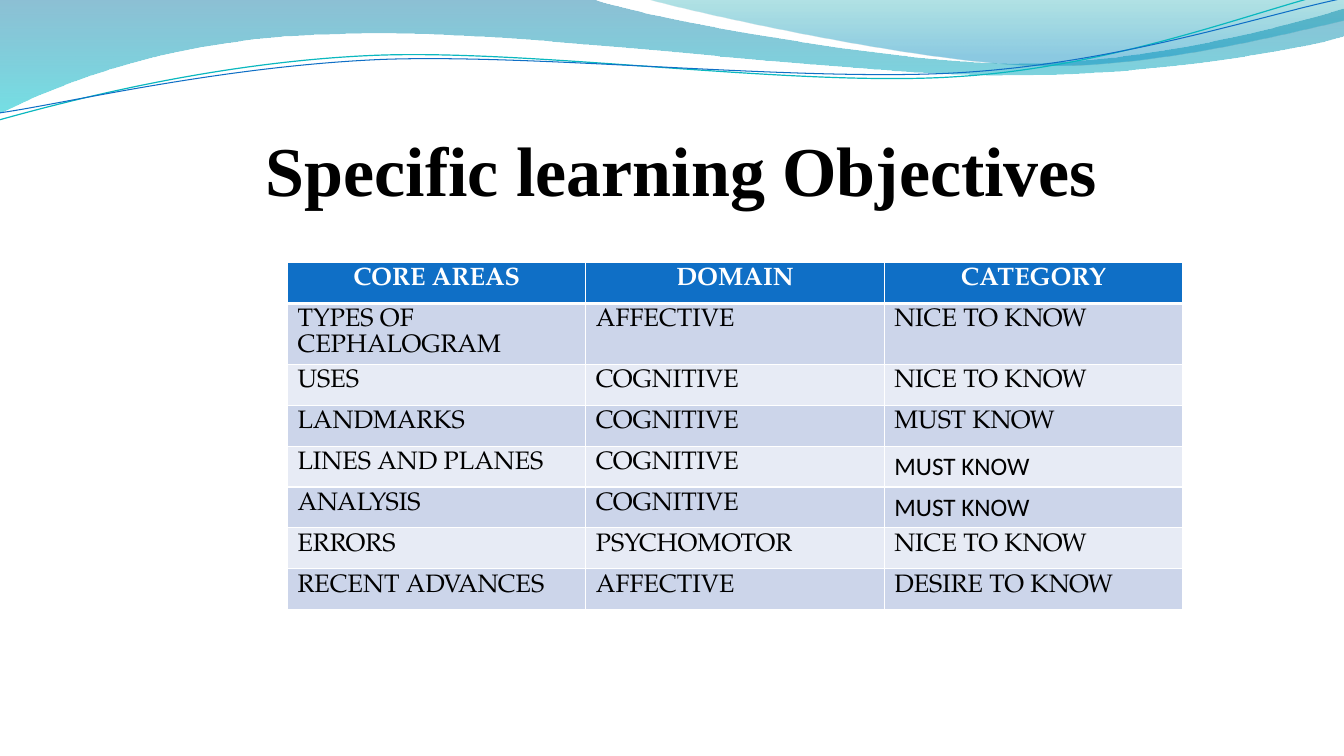
import math
from collections import namedtuple
from dataclasses import dataclass

from lxml import etree
from pptx import Presentation
from pptx import util as u
from pptx.dml.color import RGBColor
from pptx.enum import text
from pptx.oxml.ns import qn

Pt = u.Pt
Box = namedtuple("Box", "left top width height")


@dataclass(frozen=True)
class Theme:
    ink: str = "000000"
    paper: str = "FFFFFF"
    blue: str = "0F6FC6"
    teal: str = "0AB8BF"
    bands: tuple = ("CCD5EA", "E7EBF5")
    title_font: str = "Times New Roman"
    table_font: str = "TeX Gyre Pagella"
    plain_font: str = "Calibri"
    title_size: float = 50
    table_size: float = 18


THEME = Theme()
SLIDE = Box(0, 0, 960, 540)
TITLE = Box(128.9, 63, 729.4, 87.1)
TABLE = Box(205.4, 187.6, 639.36, 233.6)
LINE_TILT = -2.7

# Each step after the starting point is a straight line (2 numbers) or a Bézier curve (6 numbers).
# Gradient stops are position, colour and opacity in per cent.
WAVE_FILLS = [
    (Box(-0.7, -0.7, 961.9, 82.1),
     [(0, 0), (422.6, -0.7), (456.5, 12.2, 637.2, 45.4, 727.9, 45.4),
      (819.4, 45.4, 920.2, 18.7, 959.8, 6.5), (961.2, 25.9),
      (943.9, 31.7, 835.2, 54.7, 715.7, 54), (596.9, 54, 366.5, 20.2, 247, 24.5),
      (123.8, 25.9, 43.9, 59.8, -0.7, 81.4)],
     [(0, "0074A1", 45), (1, "00C6CF", 55)]),
    (Box(460.1, -0.7, 499.7, 50.4),
     [(460.1, -0.7), (488.9, 7.9, 654.5, 44.6, 738, 46.8),
      (821.5, 49.7, 923, 23, 959.8, 15.1), (959.8, 0)],
     [(0, "00A1A9", 30), (0.8, "008BBF", 45)]),
]
WAVE_LINES = [
    (Box(-2.2, 15.8, 961.9, 51.1),
     [(-0.7, 85.7), (46.1, 72.7, 151.9, 44.6, 265.7, 39.6),
      (379.4, 34.6, 568.8, 62.6, 684, 54.7), (799.2, 47.5, 901.4, 5.8, 958.3, -7.2)],
     THEME.teal, 0.85),
    (Box(-1.4, 21.6, 963.4, 41.8),
     [(0, 80.6), (45.4, 74.2, 157, 47.5, 272.2, 42.5),
      (386.6, 38.2, 573.1, 59, 687.6, 51.8), (802.8, 44.6, 903.6, 10.1, 960.5, -1.4)],
     THEME.blue, 0.75),
]

OBJECTIVES = [
    ("CORE AREAS", "DOMAIN", "CATEGORY"),
    ("TYPES OF CEPHALOGRAM", "AFFECTIVE", "NICE TO KNOW"),
    ("USES", "COGNITIVE", "NICE TO KNOW"),
    ("LANDMARKS", "COGNITIVE", "MUST KNOW"),
    ("LINES AND PLANES", "COGNITIVE", "MUST KNOW"),
    ("ANALYSIS", "COGNITIVE", "MUST KNOW"),
    ("ERRORS", "PSYCHOMOTOR", "NICE TO KNOW"),
    ("RECENT ADVANCES", "AFFECTIVE", "DESIRE TO KNOW"),
]
PLAIN_CELLS = {(4, 2), (5, 2)}


def set_format(target, **values):
    for name, value in values.items():
        setattr(target, name, value)


def place(shape, box):
    set_format(shape, **{name: Pt(value) for name, value in box._asdict().items()})


def format_text(paragraph, color, **values):
    for run in paragraph.runs:
        set_format(run.font, **values)
        run.font.color.rgb = RGBColor.from_string(color)


def to_local(x, y, box, tilt):
    """Return a slide point as it lies in the box before the box is tilted."""
    angle = math.radians(-tilt)
    dx, dy = x - box.left - box.width / 2, y - box.top - box.height / 2
    return (dx * math.cos(angle) - dy * math.sin(angle) + box.width / 2,
            dx * math.sin(angle) + dy * math.cos(angle) + box.height / 2)


def add_outline(slide, origin, box, steps, close, tilt=0):
    """Add a freeform whose straight and curved steps are kept as such."""
    builder = slide.shapes.build_freeform()
    builder.add_line_segments([(Pt(box.width), Pt(box.height))], close=close)
    shape = builder.convert_to_shape()
    place(shape, box._replace(left=origin.left + box.left, top=origin.top + box.top))
    shape.rotation = tilt
    shape.shadow.inherit = False
    outline = shape.element.find(".//" + qn("a:path"))
    for child in list(outline):
        outline.remove(child)
    for index, step in enumerate(steps):
        tag = "a:moveTo" if index == 0 else "a:lnTo" if len(step) == 2 else "a:cubicBezTo"
        segment = etree.SubElement(outline, qn(tag))
        for point in zip(step[::2], step[1::2]):
            x, y = to_local(*point, box, tilt)
            etree.SubElement(segment, qn("a:pt"), x=str(Pt(x)), y=str(Pt(y)))
    if close:
        etree.SubElement(outline, qn("a:close"))
    return shape


def add_waves(slide, origin):
    for box, steps, stops in WAVE_FILLS:
        shape = add_outline(slide, origin, box, steps, close=True)
        shape.line.fill.background()
        shape.fill.gradient()
        shape.fill.gradient_angle = 270
        for stop, (position, color, _) in zip(shape.fill.gradient_stops, stops):
            stop.position = position
            stop.color.rgb = RGBColor.from_string(color)
        colors = shape.element.spPr.iter(qn("a:srgbClr"))
        for color, (_, _, opacity) in zip(colors, stops):
            etree.SubElement(color, qn("a:alpha"), val=str(opacity * 1000))
    for box, steps, color, width in WAVE_LINES:
        shape = add_outline(slide, origin, box, steps, close=False, tilt=LINE_TILT)
        shape.fill.background()
        shape.line.color.rgb = RGBColor.from_string(color)
        shape.line.width = Pt(width)


def add_title(slide, box):
    title = slide.shapes.title
    place(title, box)
    frame = title.text_frame
    frame.text = "Specific learning Objectives "
    set_format(frame, vertical_anchor=text.MSO_ANCHOR.BOTTOM, word_wrap=True,
               auto_size=text.MSO_AUTO_SIZE.NONE, margin_left=0, margin_right=0,
               margin_top=Pt(3.6), margin_bottom=0)
    paragraph = frame.paragraphs[0]
    paragraph.alignment = text.PP_ALIGN.CENTER
    format_text(paragraph, THEME.ink, name=THEME.title_font,
                size=Pt(THEME.title_size), bold=True)


def set_borders(cell, widths):
    """Draw the cell's borders; the fill must be set afterwards."""
    properties = cell._tc.get_or_add_tcPr()
    for side, width in widths.items():
        line = etree.SubElement(properties, qn(f"a:ln{side}"), w=str(Pt(width)))
        fill = etree.SubElement(line, qn("a:solidFill"))
        etree.SubElement(fill, qn("a:srgbClr"), val=THEME.paper)


def add_objectives(slide, box):
    row_count, column_count = len(OBJECTIVES), len(OBJECTIVES[0])
    table = slide.shapes.add_table(row_count, column_count, *map(Pt, box)).table
    for column in table.columns:
        column.width = Pt(box.width / column_count)
    for row_index, row in enumerate(OBJECTIVES):
        table.rows[row_index].height = Pt(box.height / row_count)
        header = row_index == 0
        fill = THEME.blue if header else THEME.bands[(row_index - 1) % 2]
        borders = {"L": 1, "R": 1, "T": 3 if row_index == 1 else 1, "B": 3 if header else 1}
        for column_index, wording in enumerate(row):
            cell = table.cell(row_index, column_index)
            cell.text = wording
            set_borders(cell, borders)
            cell.fill.solid()
            cell.fill.fore_color.rgb = RGBColor.from_string(fill)
            paragraph = cell.text_frame.paragraphs[0]
            paragraph.alignment = text.PP_ALIGN.CENTER if header else text.PP_ALIGN.LEFT
            plain = (row_index, column_index) in PLAIN_CELLS
            format_text(paragraph, THEME.paper if header else THEME.ink,
                        name=THEME.plain_font if plain else THEME.table_font,
                        size=Pt(THEME.table_size), bold=header)


def main():
    presentation = Presentation()
    set_format(presentation, slide_width=Pt(SLIDE.width), slide_height=Pt(SLIDE.height))
    slide = presentation.slides.add_slide(presentation.slide_layouts.get_by_name("Title Only"))
    add_waves(slide, SLIDE)
    add_title(slide, TITLE)
    add_objectives(slide, TABLE)
    presentation.save("out.pptx")


if __name__ == "__main__":
    main()
